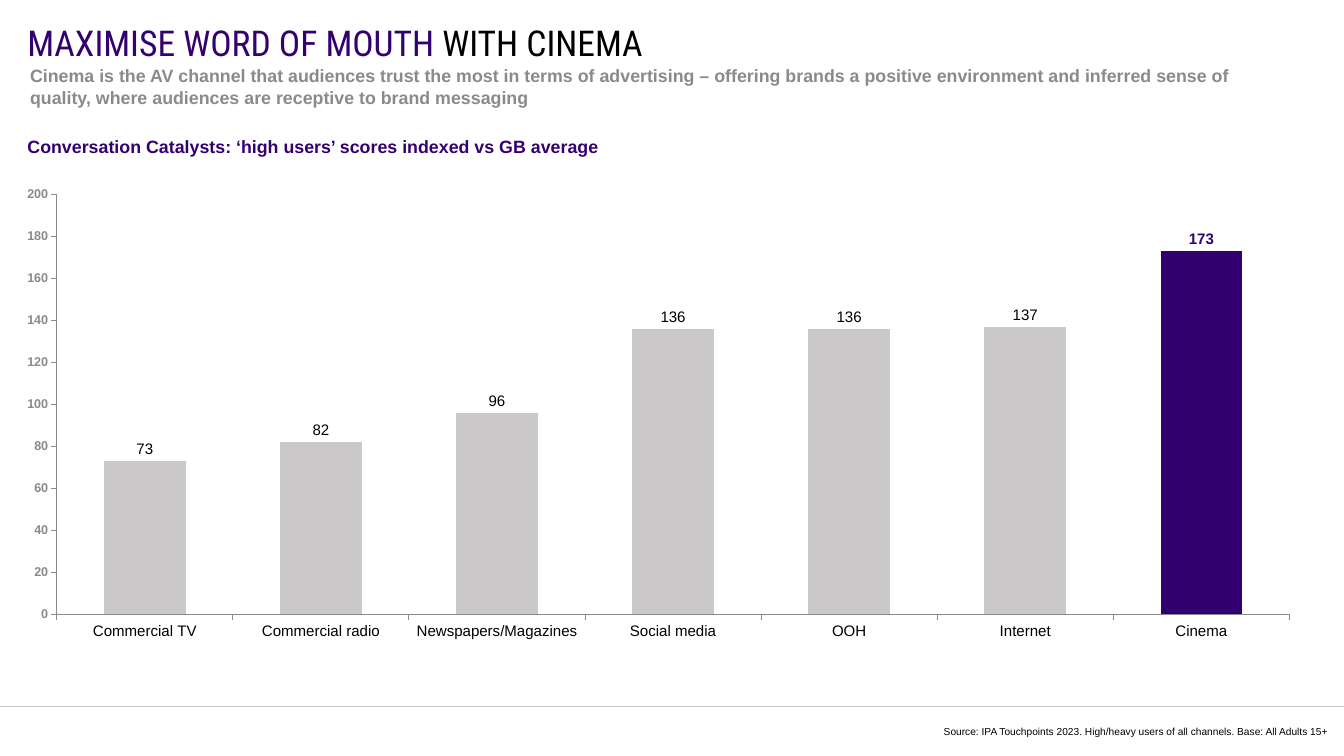
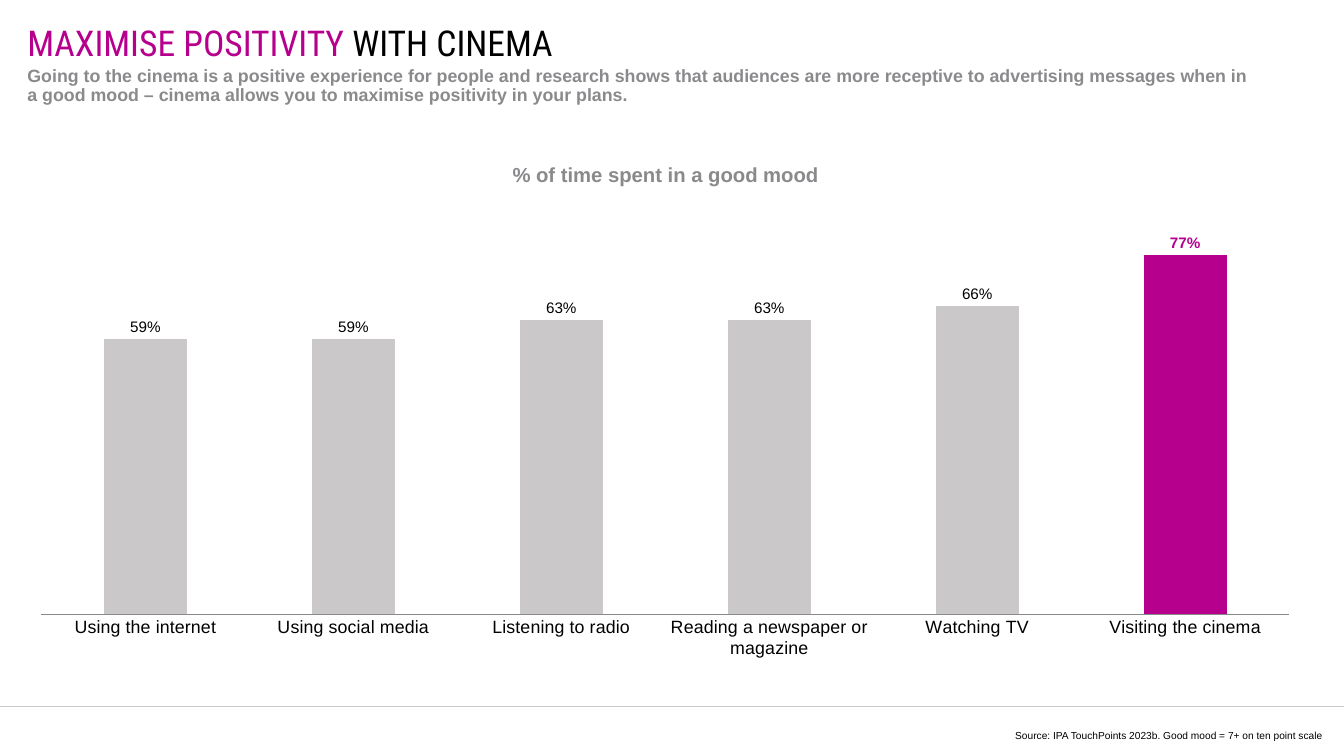
from dataclasses import dataclass

from lxml import etree
from pptx import Presentation
from pptx.chart.data import CategoryChartData
from pptx.dml.color import RGBColor
from pptx.enum.chart import XL_CHART_TYPE, XL_LABEL_POSITION, XL_TICK_MARK
from pptx.enum.text import MSO_ANCHOR, MSO_AUTO_SIZE, PP_ALIGN
from pptx.oxml import parse_xml
from pptx.oxml.ns import nsdecls, qn
from pptx.util import Inches, Pt


@dataclass(frozen=True)
class Theme:
    purple: RGBColor = RGBColor(0x33, 0x00, 0x6F)
    magenta: RGBColor = RGBColor(0xB6, 0x00, 0x8D)
    black: RGBColor = RGBColor(0x00, 0x00, 0x00)
    grey: RGBColor = RGBColor(0x8A, 0x8A, 0x8D)
    pale: RGBColor = RGBColor(0xCA, 0xC8, 0xC8)
    title_font: str = "Roboto Condensed"
    text_font: str = "Arial"
    title_size: int = 28
    heading_size: int = 16
    text_size: int = 14
    label_size: int = 12
    axis_size: int = 10
    source_size: int = 8


theme = Theme()
deck = Presentation()
deck.slide_width, deck.slide_height = Inches(14.7), Inches(8.27)

# The grid has 100 columns and 100 rows
column, row = deck.slide_width / 100, deck.slide_height / 100
margin = 2.04
chart_area = (margin, 20.8, 95.03, 68.08)
plot_area = {"x": 0.011, "y": 0.072, "w": 0.977, "h": 0.816}


def style(font, size, color, bold=False, name=theme.text_font):
    font.name, font.size, font.bold = name, Pt(size), bold
    font.color.rgb = color


def grid(left, top, width, height):
    return [round(length) for length in
            (left * column, top * row, width * column, height * row)]


# Shared layout: title position and footer rule
layout = deck.slide_layouts.get_by_name("Title Only")
layout_title = layout.placeholders[0]
(layout_title.left, layout_title.top,
 layout_title.width, layout_title.height) = grid(margin, 3.63, 92.38, 3.87)

slides = [
    dict(
        accent=theme.purple,
        title="MAXIMISE WORD OF MOUTH ",
        texts=[
            dict(text="Cinema is the AV channel that audiences trust the most in terms "
                      "of advertising – offering brands a positive environment and "
                      "inferred sense of quality, where audiences are receptive to "
                      "brand messaging",
                 at=(2.24, 8.59, 89.8, 5.8)),
            dict(text="Conversation Catalysts: ‘high users’ scores indexed vs GB average",
                 at=(margin, 17.9, 92.38, 2.9), color=theme.purple),
            dict(text="Source: IPA Touchpoints 2023. High/heavy users of all channels. "
                      "Base: All Adults 15+",
                 at=(55.44, 95.65, 43.4, 1.93), color=theme.black,
                 size=theme.source_size, bold=False, align=PP_ALIGN.RIGHT,
                 anchor=MSO_ANCHOR.BOTTOM, spacing=8.4),
        ],
        values={"Commercial TV": 73, "Commercial radio": 82,
                "Newspapers/Magazines": 96, "Social media": 136, "OOH": 136,
                "Internet": 137, "Cinema": 173},
        number_format="General", gap=116, top=200, step=20, show_axis=True,
        category_size=theme.label_size, tick=XL_TICK_MARK.OUTSIDE,
    ),
    dict(
        accent=theme.magenta,
        title="MAXIMISE POSITIVITY ",
        texts=[
            dict(text="Going to the cinema is a positive experience for people and "
                      "research shows that audiences are more receptive to advertising "
                      "messages when in a good mood – cinema allows you to maximise "
                      "positivity in your plans.",
                 at=(margin, 8.83, 91.22, 5.8), spacing=15),
            dict(text="% of time spent in a good mood",
                 at=(30.68, 21.4, 37.69, 3.2), size=theme.heading_size,
                 align=PP_ALIGN.CENTER),
            dict(text="Source: IPA TouchPoints 2023b. Good mood = 7+ on ten point scale",
                 at=(41.43, 95.16, 57.01, 2.78), color=theme.black,
                 size=theme.source_size, bold=False, align=PP_ALIGN.RIGHT,
                 anchor=MSO_ANCHOR.MIDDLE, spacing=19),
        ],
        values={"Using the internet": 0.59, "Using social media": 0.59,
                "Listening to radio": 0.63, "Reading a newspaper or magazine": 0.63,
                "Watching TV": 0.66, "Visiting the cinema": 0.77},
        number_format="0%", gap=150, top=0.9, step=0.1, show_axis=False,
        category_size=theme.text_size, tick=XL_TICK_MARK.NONE,
    ),
]

for content in slides:
    page = deck.slides.add_slide(layout)

    # Title in two colours
    frame = page.shapes.title.text_frame
    frame.margin_left = frame.margin_top = frame.margin_right = frame.margin_bottom = 0
    frame.auto_size, frame.vertical_anchor = MSO_AUTO_SIZE.NONE, MSO_ANCHOR.MIDDLE
    para = frame.paragraphs[0]
    para.alignment = PP_ALIGN.LEFT
    style(para.font, theme.title_size, theme.black, name=theme.title_font)
    for text, color in ((content["title"], content["accent"]),
                        ("WITH CINEMA", theme.black)):
        span = para.add_run()
        span.text = text
        span.font.color.rgb = color

    # Column chart
    data = CategoryChartData(number_format=content["number_format"])
    data.categories = list(content["values"])
    data.add_series("Series 1", list(content["values"].values()))
    chart = page.shapes.add_chart(
        XL_CHART_TYPE.COLUMN_CLUSTERED, *grid(*chart_area), data).chart
    chart.has_legend = chart.has_title = False
    style(chart.font, theme.axis_size, theme.black)

    # Fixed inner plot area
    plot_xml = chart._chartSpace.chart.plotArea
    for old_layout in plot_xml.findall(qn("c:layout")):
        plot_xml.remove(old_layout)
    plot_layout = parse_xml(
        f'<c:layout {nsdecls("c")}><c:manualLayout><c:layoutTarget val="inner"/>'
        '<c:xMode val="edge"/><c:yMode val="edge"/></c:manualLayout></c:layout>')
    for side, share in plot_area.items():
        etree.SubElement(plot_layout[0], qn(f"c:{side}")).set("val", str(share))
    plot_xml.insert(0, plot_layout)

    # Axes
    categories, scale = chart.category_axis, chart.value_axis
    categories.major_tick_mark = content["tick"]
    style(categories.tick_labels.font, content["category_size"], theme.black)
    scale.visible = content["show_axis"]
    scale.has_major_gridlines = False
    scale.minimum_scale, scale.maximum_scale = 0, content["top"]
    scale.major_unit = content["step"]
    scale.major_tick_mark = XL_TICK_MARK.OUTSIDE
    style(scale.tick_labels.font, theme.axis_size, theme.grey, bold=True)
    for axis in (categories, scale):
        axis.format.line.color.rgb = theme.grey
        axis.format.line.width = Pt(0.75)

    # Columns and labels, the last one highlighted
    plot = chart.plots[0]
    plot.vary_by_categories, plot.gap_width = False, content["gap"]
    series = plot.series[0]
    series.format.fill.solid()
    series.format.fill.fore_color.rgb = theme.pale
    series.data_labels.show_value = True
    series.data_labels.position = XL_LABEL_POSITION.OUTSIDE_END
    style(series.data_labels.font, theme.label_size, theme.black)
    cinema = series.points[len(content["values"]) - 1]
    cinema.format.fill.solid()
    cinema.format.fill.fore_color.rgb = content["accent"]
    style(cinema.data_label.font, theme.label_size, content["accent"], bold=True)
    cinema.data_label.position = XL_LABEL_POSITION.OUTSIDE_END

    # Introduction, heading and source
    for item in content["texts"]:
        box = page.shapes.add_textbox(*grid(*item["at"]))
        frame = box.text_frame
        frame.word_wrap = True
        frame.margin_left = frame.margin_top = frame.margin_right = frame.margin_bottom = 0
        frame.vertical_anchor = item.get("anchor", MSO_ANCHOR.TOP)
        para = frame.paragraphs[0]
        para.text = item["text"]
        para.alignment = item.get("align", PP_ALIGN.LEFT)
        if "spacing" in item:
            para.line_spacing = Pt(item["spacing"])
        style(para.font, item.get("size", theme.text_size),
              item.get("color", theme.grey), item.get("bold", True))

# Footer rule, drawn once and moved to the layout
left, top, width, height = grid(0, 93.47, 100, 0)
rule = page.shapes.add_connector(1, left, top, left + width, top)
rule.line.color.rgb, rule.line.width = theme.pale, Pt(0.5)
etree.SubElement(rule._element.spPr, qn("a:effectLst"))
layout.shapes._spTree.append(rule._element)

deck.save("out.pptx")
